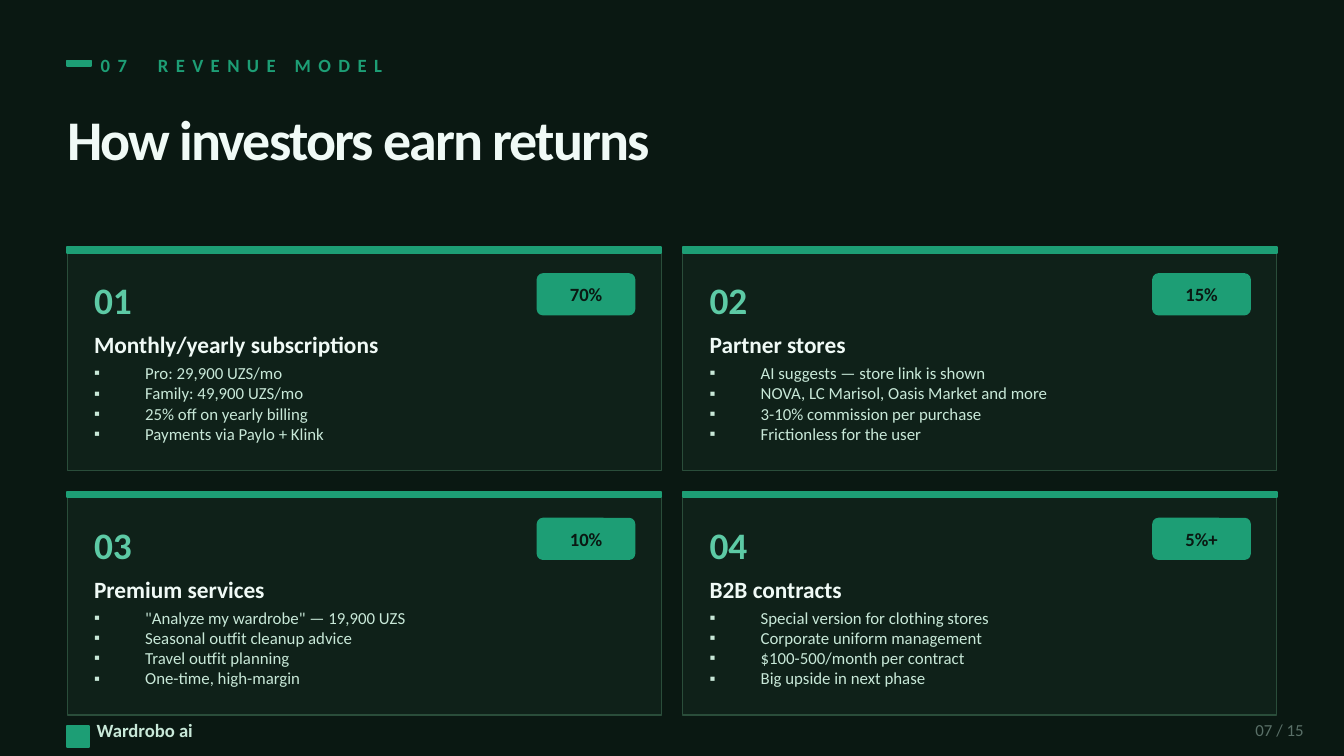
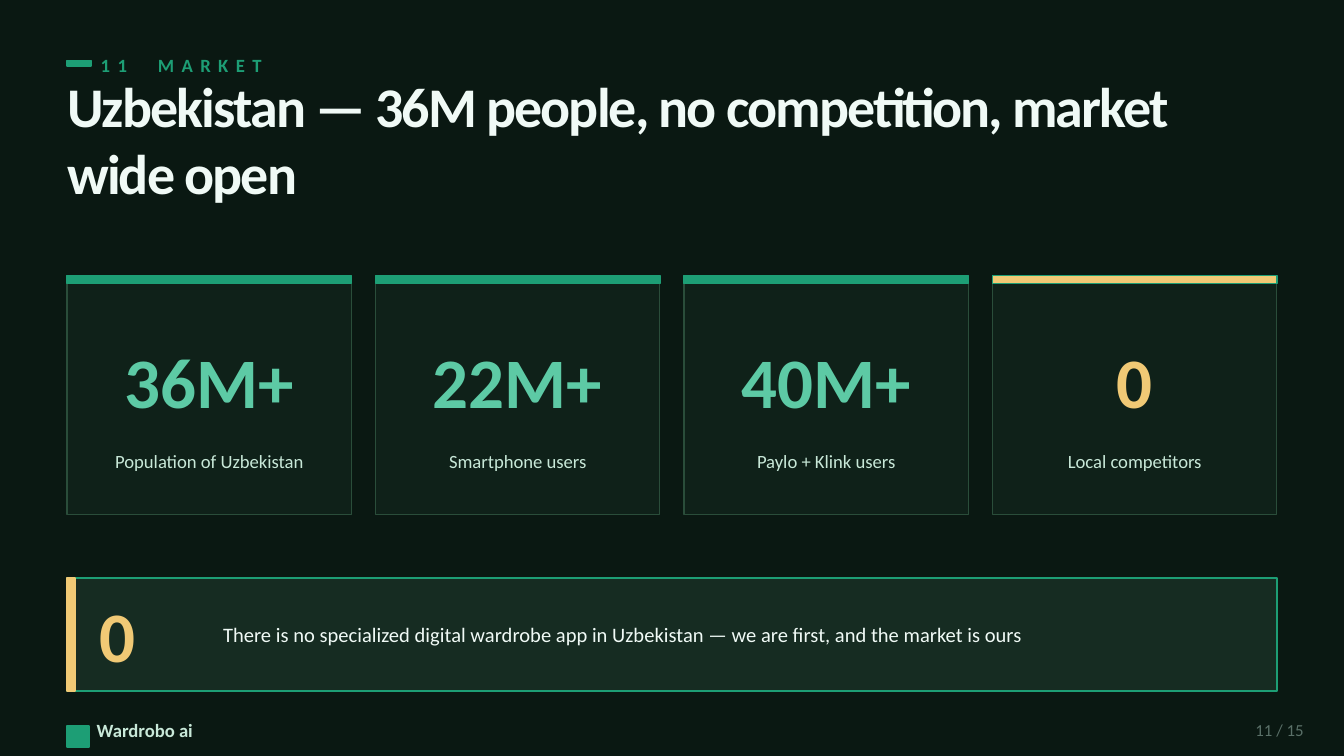
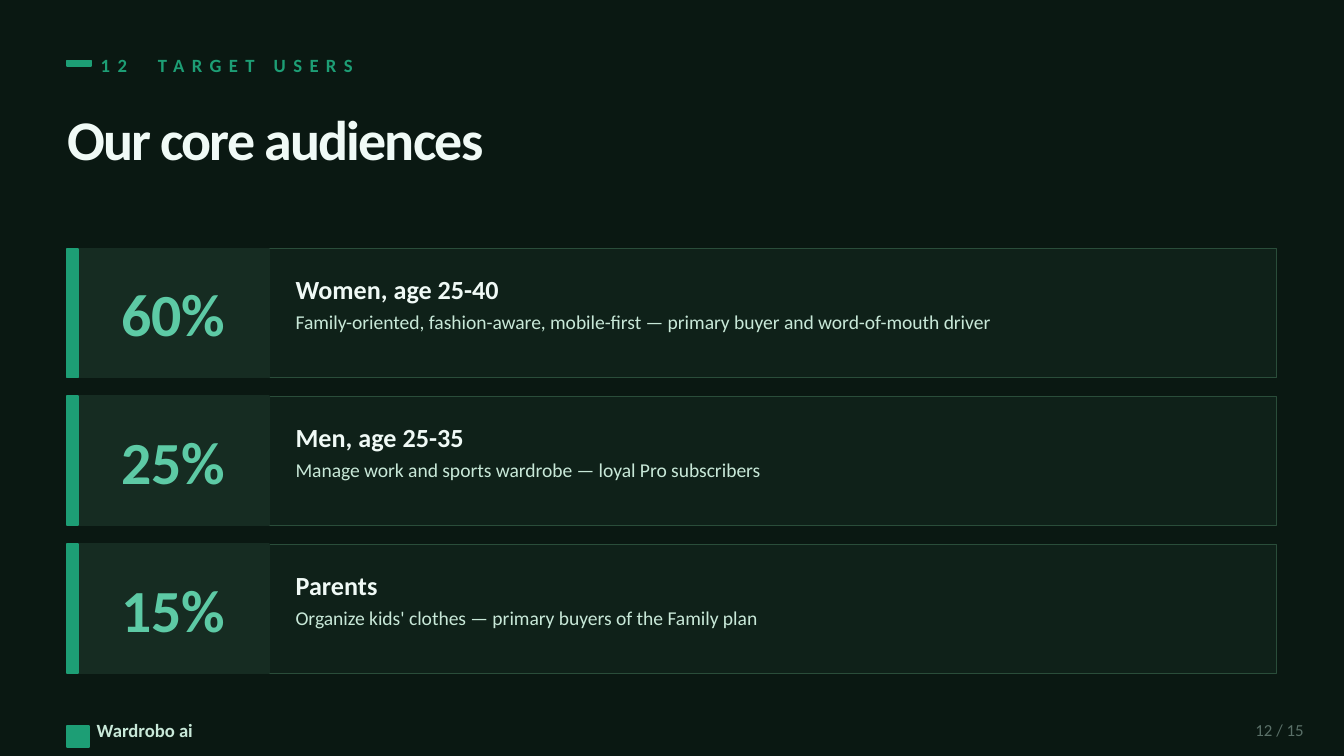
from lxml import etree
from pptx import Presentation
from pptx.dml.color import RGBColor
from pptx.enum.shapes import MSO_SHAPE as Shape
from pptx.enum.text import MSO_ANCHOR as Anchor, MSO_AUTO_SIZE as AutoSize, PP_ALIGN as Align
from pptx.oxml.ns import qn
from pptx.util import Inches, Pt

NIGHT = RGBColor(0x0A, 0x18, 0x12)
CARD = RGBColor(0x0F, 0x21, 0x19)
PANEL = RGBColor(0x16, 0x2C, 0x22)
EDGE = RGBColor(0x2A, 0x4D, 0x3A)
GREEN = RGBColor(0x1D, 0x9E, 0x75)
MINT = RGBColor(0x5D, 0xCA, 0xA5)
GOLD = RGBColor(0xF0, 0xC9, 0x75)
WHITE = RGBColor(0xF0, 0xFA, 0xF6)
PALE = RGBColor(0xC8, 0xE8, 0xD8)
GRAY = RGBColor(0x5A, 0x70, 0x68)

FONT = "Calibri"
BRAND = "Wardrobo ai"
TOTAL = 15
LEFT, WIDTH = 0.5, 9
TITLE_ONLY, COMPARISON = 5, 4


class Pitch:
    def __init__(self):
        self.deck = Presentation()
        self.deck.slide_width = Inches(10)
        self.deck.slide_height = Inches(10 * 9 / 16)
        background = self.deck.slide_master.background.fill
        background.solid()
        background.fore_color.rgb = NIGHT
        self.page = None

    def start(self, number, section, title, layout=TITLE_ONLY):
        self.page = self.deck.slides.add_slide(self.deck.slide_layouts[layout])
        self.rect(LEFT, 0.45, 0.18, 0.04, GREEN)
        kicker = self.frame(self.page.shapes.add_textbox(0, 0, 0, 0), 0.75, 0.34, 4, 0.28)
        para = kicker.paragraphs[0]
        for words, spacing in ((f"{number:02}", 4), (" ", 10.3), (section, 4)):
            self.span(para, words, 10, GREEN, True, spacing)
        heading = self.frame(self.page.shapes.title, LEFT, 0.72, WIDTH, 0.62)
        heading.paragraphs[0].alignment = Align.LEFT
        self.span(heading.paragraphs[0], title, 30, WHITE, True, -1)
        self.rect(LEFT, 5.4, 0.16, 0.16, GREEN)
        self.text(0.72, 5.32, 3, 0.22, BRAND, 10, PALE, bold=True)
        self.text(9, 5.32, 0.7, 0.22, f"{number:02} / {TOTAL}", 9, GRAY, align=Align.RIGHT)

    def frame(self, box, left, top, width, height, anchor=Anchor.MIDDLE):
        box.left, box.top = Inches(left), Inches(top)
        box.width, box.height = Inches(width), Inches(height)
        frame = box.text_frame
        frame.margin_left = frame.margin_right = frame.margin_top = frame.margin_bottom = 0
        frame.word_wrap = True
        frame.auto_size = AutoSize.NONE
        frame.vertical_anchor = anchor
        return frame

    def span(self, para, words, size, color, bold=False, spacing=None):
        span = para.add_run()
        span.text = words
        span.font.name = FONT
        span.font.size = Pt(size)
        span.font.bold = bold
        span.font.color.rgb = color
        if spacing is not None:
            span.font._element.set("spc", str(round(spacing * 100)))

    def text(self, left, top, width, height, words, size, color,
             bold=False, align=Align.LEFT, anchor=Anchor.MIDDLE):
        box = self.page.shapes.add_textbox(0, 0, 0, 0)
        para = self.frame(box, left, top, width, height, anchor).paragraphs[0]
        para.alignment = align
        self.span(para, words, size, color, bold)

    def rect(self, left, top, width, height, fill, line=None, weight=1, kind=Shape.RECTANGLE):
        shape = self.page.shapes.add_shape(
            kind, Inches(left), Inches(top), Inches(width), Inches(height))
        shape.shadow.inherit = False
        shape.fill.solid()
        shape.fill.fore_color.rgb = fill
        shape.line.color.rgb = line or fill
        shape.line.width = Pt(weight)
        return shape

    def card(self, left, top, width, height):
        self.rect(left, top, width, height, CARD, EDGE, 0.75)

    def badge(self, left, top, words):
        pill = self.rect(left, top, 0.72, 0.3, GREEN, kind=Shape.ROUNDED_RECTANGLE)
        pill.adjustments[0] = 0.04 / 0.3
        self.text(left, top, 0.72, 0.3, words, 10, NIGHT, bold=True, align=Align.CENTER)

    def bullets(self, index, left, top, width, height, items):
        box = self.page.placeholders[index]
        box.element.getparent().append(box.element)
        frame = self.frame(box, left, top, width, height, Anchor.TOP)
        for position, item in enumerate(items):
            para = frame.add_paragraph() if position else frame.paragraphs[0]
            properties = para._p.get_or_add_pPr()
            properties.set("marL", str(Inches(0.38)))
            properties.set("indent", str(-Inches(0.38)))
            etree.SubElement(properties, qn("a:buChar")).set("char", "▪")
            para.space_before = Pt(0)
            self.span(para, item, 9, PALE)


def revenue_slide(pitch):
    pitch.start(7, "REVENUE MODEL", "How investors earn returns", COMPARISON)
    streams = [
        ("Monthly/yearly subscriptions", "70%",
         ["Pro: 29,900 UZS/mo", "Family: 49,900 UZS/mo",
          "25% off on yearly billing", "Payments via Paylo + Klink"]),
        ("Partner stores", "15%",
         ["AI suggests — store link is shown", "NOVA, LC Marisol, Oasis Market and more",
          "3-10% commission per purchase", "Frictionless for the user"]),
        ("Premium services", "10%",
         ['"Analyze my wardrobe" — 19,900 UZS', "Seasonal outfit cleanup advice",
          "Travel outfit planning", "One-time, high-margin"]),
        ("B2B contracts", "5%+",
         ["Special version for clothing stores", "Corporate uniform management",
          "$100-500/month per contract", "Big upside in next phase"]),
    ]
    width, height, gap = 4.42, 1.66, 0.16
    for index, (name, share, items) in enumerate(streams):
        row, column = divmod(index, 2)
        left = LEFT + column * (width + gap)
        top = 1.84 + row * (height + gap)
        inner = left + 0.2
        pitch.card(left, top, width, height)
        pitch.rect(left, top, width, 0.04, GREEN)
        pitch.text(inner, top + 0.18, 0.86, 0.42, f"{index + 1:02}", 20, MINT, bold=True)
        pitch.badge(left + 3.5, top + 0.2, share)
        pitch.text(inner, top + 0.58, 4.02, 0.28, name, 12.5, WHITE, bold=True)
        pitch.bullets(index + 1, inner, top + 0.86, 4.02, 0.74, items)


def market_slide(pitch):
    pitch.start(11, "MARKET", "Uzbekistan — 36M people, no competition, market wide open")
    figures = [
        ("36M+", "Population of Uzbekistan", GREEN, MINT),
        ("22M+", "Smartphone users", GREEN, MINT),
        ("40M+", "Paylo + Klink users", GREEN, MINT),
        ("0", "Local competitors", GOLD, GOLD),
    ]
    top, gap = 2.05, 0.18
    width = (WIDTH - gap * (len(figures) - 1)) / len(figures)
    for index, (figure, label, band, color) in enumerate(figures):
        left = LEFT + index * (width + gap)
        pitch.card(left, top, width, 1.78)
        pitch.rect(left, top, width, 0.06, band, GREEN)
        pitch.text(left + 0.1, top + 0.3, width - 0.2, 0.96, figure, 38, color,
                   bold=True, align=Align.CENTER)
        pitch.text(left + 0.1, top + 1.3, width - 0.2, 0.4, label, 10, PALE,
                   align=Align.CENTER, anchor=Anchor.TOP)
    pitch.rect(LEFT, 4.3, WIDTH, 0.84, PANEL, GREEN)
    pitch.rect(LEFT, 4.3, 0.06, 0.84, GOLD)
    pitch.text(0.74, 4.4, 0.8, 0.64, "0", 38, GOLD, bold=True)
    pitch.text(1.66, 4.4, 7.74, 0.64,
               "There is no specialized digital wardrobe app in Uzbekistan — "
               "we are first, and the market is ours", 11, WHITE)


def audience_slide(pitch):
    pitch.start(12, "TARGET USERS", "Our core audiences")
    audiences = [
        ("60%", "Women, age 25-40",
         "Family-oriented, fashion-aware, mobile-first — primary buyer and word-of-mouth driver"),
        ("25%", "Men, age 25-35", "Manage work and sports wardrobe — loyal Pro subscribers"),
        ("15%", "Parents", "Organize kids' clothes — primary buyers of the Family plan"),
    ]
    height = 0.96
    for index, (share, name, detail) in enumerate(audiences):
        top = 1.85 + index * 1.1
        pitch.card(LEFT, top, WIDTH, height)
        pitch.rect(LEFT, top, 1.5, height, PANEL)
        pitch.rect(LEFT, top, 0.08, height, GREEN)
        pitch.text(0.58, top, 1.42, height, share, 32, MINT, bold=True, align=Align.CENTER)
        pitch.text(2.2, top + 0.12, 7.2, 0.36, name, 14, WHITE, bold=True)
        pitch.text(2.2, top + 0.46, 7.2, 0.46, detail, 10.5, PALE, anchor=Anchor.TOP)


def main():
    pitch = Pitch()
    revenue_slide(pitch)
    market_slide(pitch)
    audience_slide(pitch)
    pitch.deck.save("out.pptx")


if __name__ == "__main__":
    main()
